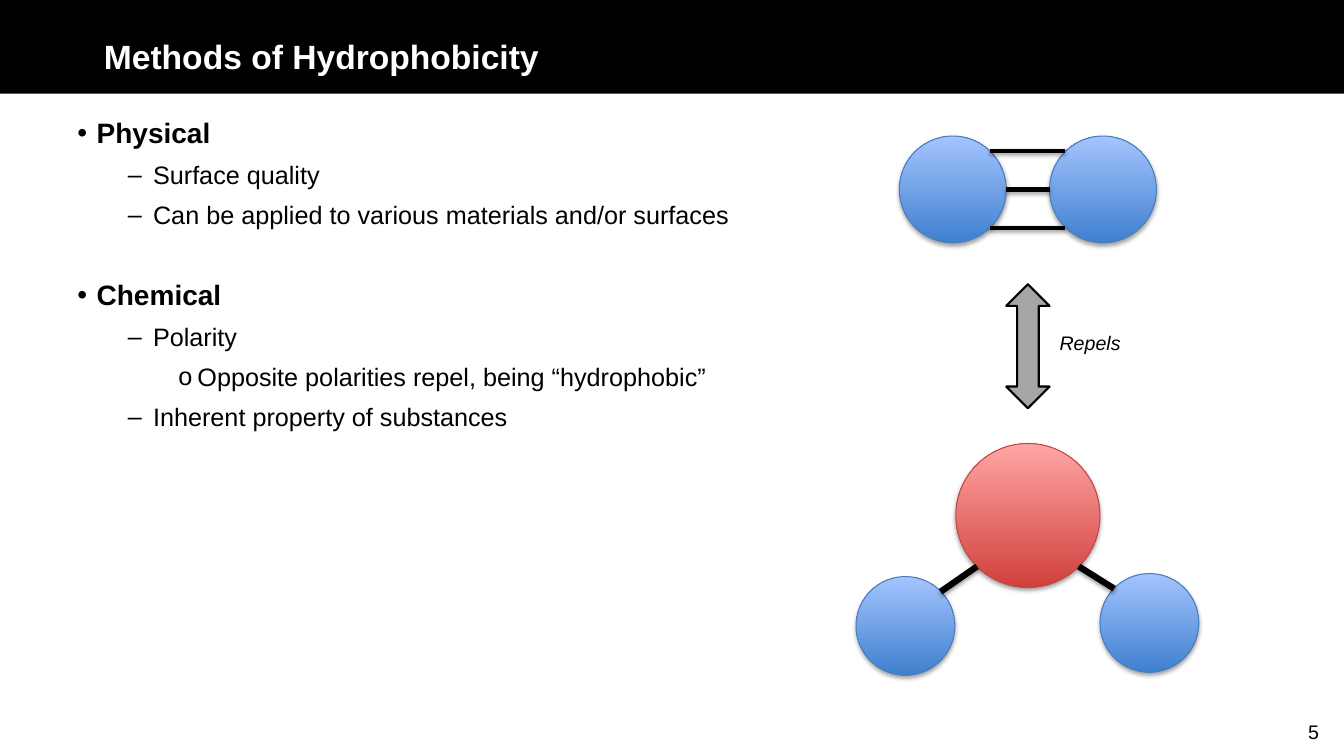
from lxml import etree
from pptx import Presentation
from pptx.dml.color import RGBColor
from pptx.enum.shapes import MSO_CONNECTOR, MSO_SHAPE
from pptx.enum.text import MSO_ANCHOR, PP_ALIGN
from pptx.oxml.ns import qn
from pptx.util import Inches, Pt

RECTANGLE, OVAL, DOUBLE_ARROW = MSO_SHAPE.RECTANGLE, MSO_SHAPE.OVAL, MSO_SHAPE.LEFT_RIGHT_ARROW
STRAIGHT = MSO_CONNECTOR.STRAIGHT
MIDDLE, TOP = MSO_ANCHOR.MIDDLE, MSO_ANCHOR.TOP
LEFT, RIGHT = PP_ALIGN.LEFT, PP_ALIGN.RIGHT

COLORS = {
    "black": "000000", "white": "FFFFFF", "gray": "A6A6A6",
    "blue_dark": "3F80CE", "blue_light": "A4C4FF", "blue_edge": "4B7EBC",
    "red_dark": "D1403C", "red_light": "FFA6A5", "red_edge": "BF4C48",
}
BULLETS = [("•", 0.19, 0.19), ("–", 0.75, 0.25), ("o", 1.19, 0.19)]
OUTLINE = [
    (0, "Physical"),
    (1, "Surface quality"),
    (1, "Can be applied to various materials and/or surfaces"),
    (0, "Chemical"),
    (1, "Polarity"),
    (2, "Opposite polarities repel, being “hydrophobic”"),
    (1, "Inherent property of substances"),
]


def rgb(name):
    return RGBColor.from_string(COLORS[name])


def write(paragraph, text, size=18, color="black", bold=False, italic=False, align=LEFT):
    paragraph.alignment = align
    run = paragraph.add_run()
    run.text = text
    font = run.font
    font.name, font.size, font.bold, font.italic = "Arial", Pt(size), bold, italic
    font.color.rgb = rgb(color)


def add_shadow(shape, opacity, distance):
    effects = etree.SubElement(shape._element.spPr, qn("a:effectLst"))
    shadow = etree.SubElement(effects, qn("a:outerShdw"), blurRad=str(Pt(3.1)),
                              dist=str(Pt(distance)), dir="5400000", rotWithShape="0")
    tint = etree.SubElement(shadow, qn("a:srgbClr"), val=COLORS["black"])
    etree.SubElement(tint, qn("a:alpha"), val=str(opacity * 1000))


class SlideBuilder:
    """Hold the slide and draw its elements in one shared style."""

    def __init__(self, slide):
        self.slide = slide

    def title_bar(self, text):
        bar = self.slide.shapes.add_shape(RECTANGLE, 0, 0, Inches(13.33), Inches(0.93))
        bar.shadow.inherit = False
        bar.fill.solid()
        bar.fill.fore_color.rgb = rgb("black")
        bar.line.fill.background()
        self.slide.shapes._spTree.insert(2, bar._element)
        title = self.slide.shapes.title
        title.left, title.top = Inches(0.93), Inches(0.25)
        title.width, title.height = Inches(10.79), Inches(0.61)
        title.text_frame.vertical_anchor = MIDDLE
        write(title.text_frame.paragraphs[0], text, size=24, color="white", bold=True)

    def text_box(self, left, top, width, height, wrap=True):
        box = self.slide.shapes.add_textbox(
            Inches(left), Inches(top), Inches(width), Inches(height))
        frame = box.text_frame
        frame.word_wrap, frame.vertical_anchor = wrap, TOP
        return frame

    def label(self, text, left, top, width, height, wrap=True, **style):
        frame = self.text_box(left, top, width, height, wrap)
        write(frame.paragraphs[0], text, size=14, **style)

    def outline(self, items, left, top, width, height):
        frame = self.text_box(left, top, width, height)
        for index, (level, text) in enumerate(items):
            paragraph = frame.add_paragraph() if index else frame.paragraphs[0]
            paragraph.level = level
            paragraph.space_after = Pt(7)
            if index and level == 0:
                paragraph.space_before = Pt(27.5)
            mark, margin, hang = BULLETS[level]
            properties = paragraph._p.get_or_add_pPr()
            properties.set("marL", str(Inches(margin)))
            properties.set("indent", str(-Inches(hang)))
            etree.SubElement(properties, qn("a:buFont"), typeface="Arial")
            etree.SubElement(properties, qn("a:buChar"), char=mark)
            heading = level == 0
            write(paragraph, text, size=20 if heading else 18, bold=heading)

    def atom(self, molecule, left, top, diameter, hue="blue"):
        ball = molecule.shapes.add_shape(
            OVAL, Inches(left), Inches(top), Inches(diameter), Inches(diameter))
        ball.fill.gradient()
        ball.fill.gradient_angle = 90
        for stop, tone in zip(ball.fill.gradient_stops, ("dark", "light")):
            stop.color.rgb = rgb(f"{hue}_{tone}")
        ball.line.color.rgb = rgb(f"{hue}_edge")
        ball.line.width = Pt(0.75)
        add_shadow(ball, 35, 1.8)

    def bond(self, molecule, x1, y1, x2, y2, width):
        stick = molecule.shapes.add_connector(
            STRAIGHT, Inches(x1), Inches(y1), Inches(x2), Inches(y2))
        stick.line.color.rgb = rgb("black")
        stick.line.width = Pt(width)
        add_shadow(stick, 38, 1.6)

    def repulsion_arrow(self, left, top, width, height):
        arrow = self.slide.shapes.add_shape(
            DOUBLE_ARROW, Inches(left), Inches(top), Inches(width), Inches(height))
        arrow.rotation = 90
        arrow.shadow.inherit = False
        arrow.fill.solid()
        arrow.fill.fore_color.rgb = rgb("gray")
        arrow.line.color.rgb = rgb("black")
        arrow.line.width = Pt(1.5)


def main():
    deck = Presentation()
    deck.slide_width, deck.slide_height = Inches(13.33), Inches(7.5)
    slide = deck.slides.add_slide(deck.slide_layouts[5])
    builder = SlideBuilder(slide)
    builder.title_bar("Methods of Hydrophobicity")
    builder.label("5", 11.73, 7.09, 1.45, 0.34, align=RIGHT)
    builder.outline(OUTLINE, 0.67, 1.1, 12, 5.6)

    polar = slide.shapes.add_group_shape()
    builder.atom(polar, 8.49, 5.72, 0.98)
    builder.atom(polar, 9.48, 4.4, 1.43, hue="red")
    builder.atom(polar, 10.91, 5.69, 0.98)
    builder.bond(polar, 9.33, 5.87, 9.69, 5.62, 4.5)
    builder.bond(polar, 11.05, 5.84, 10.7, 5.62, 4.5)

    nonpolar = slide.shapes.add_group_shape()
    for left in (8.92, 10.41):
        builder.atom(nonpolar, left, 1.35, 1.06)
    for start, end, y in ((9.98, 10.41, 1.88), (9.82, 10.56, 1.5), (9.82, 10.56, 2.26)):
        builder.bond(nonpolar, start, y, end, y, 3)

    builder.repulsion_arrow(9.58, 3.22, 1.23, 0.43)
    builder.label("Repels", 10.41, 3.23, 0.81, 0.34, wrap=False, italic=True)
    deck.save("out.pptx")


if __name__ == "__main__":
    main()
